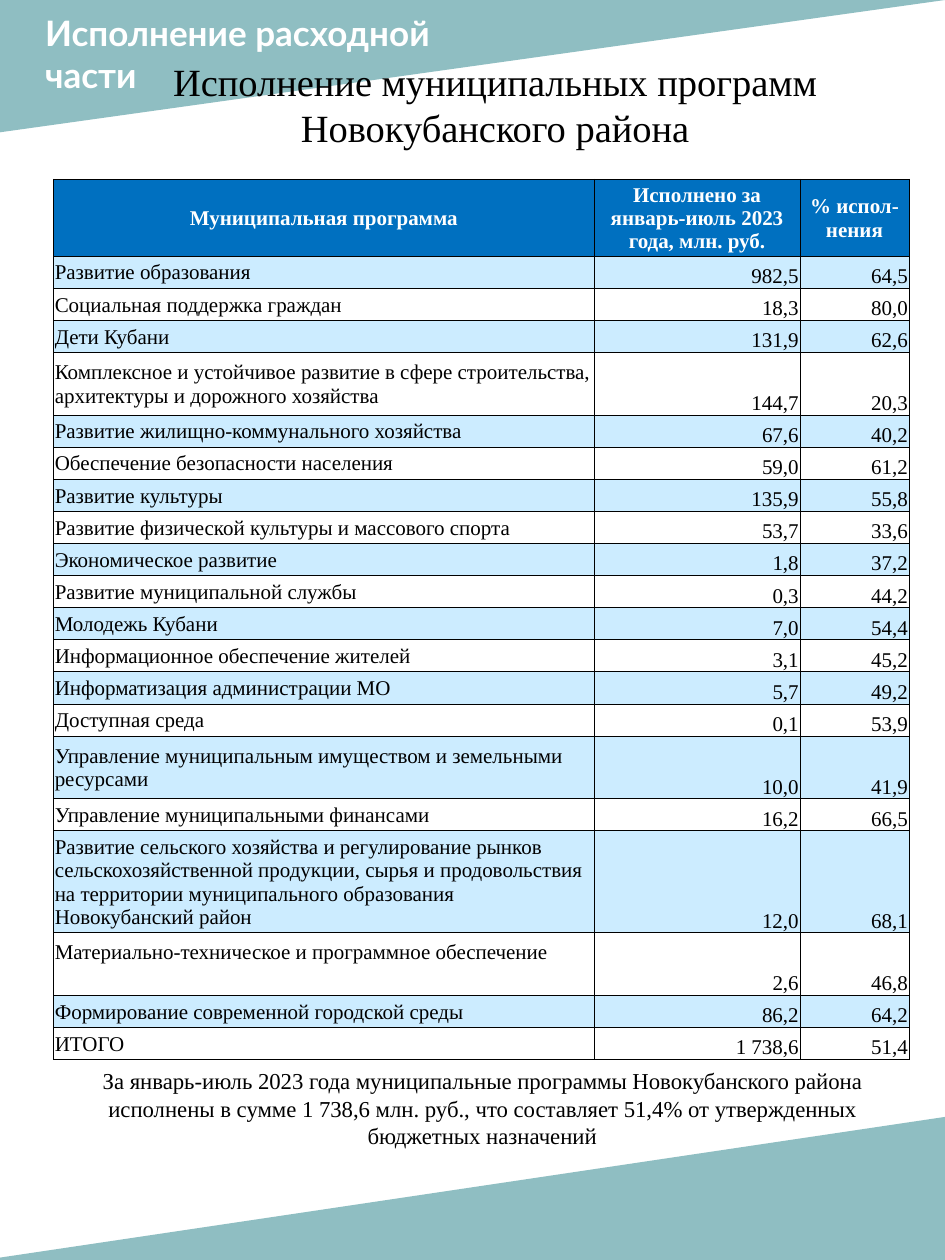
from lxml import etree
from pptx import Presentation
from pptx.dml.color import RGBColor
from pptx.enum import shapes, text
from pptx.oxml import ns
from pptx.util import Pt

TEAL = RGBColor(0x51, 0x9A, 0xA0)
BLUE = RGBColor(0x00, 0x70, 0xC0)
PALE = RGBColor(0xCC, 0xEC, 0xFF)
WHITE = RGBColor(0xFF, 0xFF, 0xFF)
BLACK = RGBColor(0x00, 0x00, 0x00)
SERIF = "Times New Roman"
LEFT, CENTER, RIGHT = text.PP_ALIGN.LEFT, text.PP_ALIGN.CENTER, text.PP_ALIGN.RIGHT
MIDDLE, BOTTOM = text.MSO_ANCHOR.MIDDLE, text.MSO_ANCHOR.BOTTOM

COLUMNS = (309, 117.5, 62.4)
LINE_HEIGHTS = {1: 18.35, 2: 35.8, 4: 53.5}
HEADINGS = ("Муниципальная программа", "Исполнено за январь-июль 2023 года, млн. руб.", "% испол-нения")
SPARE_LINE = "Материально-техническое и программное обеспечение"
PROGRAMS = [
    ("Развитие образования", "982,5", "64,5", 1),
    ("Социальная поддержка граждан", "18,3", "80,0", 1),
    ("Дети Кубани", "131,9", "62,6", 1),
    ("Комплексное и устойчивое развитие в сфере строительства, архитектуры и дорожного хозяйства",
     "144,7", "20,3", 2),
    ("Развитие жилищно-коммунального хозяйства", "67,6", "40,2", 1),
    ("Обеспечение безопасности населения", "59,0", "61,2", 1),
    ("Развитие культуры", "135,9", "55,8", 1),
    ("Развитие физической культуры и массового спорта", "53,7", "33,6", 1),
    ("Экономическое развитие", "1,8", "37,2", 1),
    ("Развитие муниципальной службы", "0,3", "44,2", 1),
    ("Молодежь Кубани", "7,0", "54,4", 1),
    ("Информационное обеспечение жителей", "3,1", "45,2", 1),
    ("Информатизация администрации МО", "5,7", "49,2", 1),
    ("Доступная среда", "0,1", "53,9", 1),
    ("Управление муниципальным имуществом и земельными ресурсами", "10,0", "41,9", 2),
    ("Управление муниципальными финансами", "16,2", "66,5", 1),
    ("Развитие сельского хозяйства и регулирование рынков сельскохозяйственной продукции, сырья "
     "и продовольствия на территории муниципального образования Новокубанский район", "12,0", "68,1", 4),
    (SPARE_LINE, "2,6", "46,8", 2),
    ("Формирование современной городской среды", "86,2", "64,2", 1),
    ("ИТОГО", "1 738,6", "51,4", 1),
]


def style_text(frame, size, font, color, align, bold=False):
    """Format every run of a text frame alike."""
    for paragraph in frame.paragraphs:
        paragraph.alignment = align
        for run in paragraph.runs:
            run.font.size = Pt(size)
            run.font.name = font
            run.font.bold = bold
            run.font.color.rgb = color


def add_wedge(slide, box, flip):
    """Place a translucent corner triangle, turned half round and flipped."""
    wedge = slide.shapes.add_shape(shapes.MSO_SHAPE.RIGHT_TRIANGLE, *map(Pt, box))
    wedge.shadow.inherit = False
    wedge.rotation = 180
    wedge.element.spPr.find(ns.qn("a:xfrm")).set(flip, "1")
    wedge.fill.solid()
    wedge.fill.fore_color.rgb = TEAL
    wedge.line.fill.background()
    tint = wedge.element.spPr.find(ns.qn("a:solidFill"))[0]
    etree.SubElement(tint, ns.qn("a:alpha")).set("val", "64000")


def add_caption(slide, box, wording, size, font, color, align, bold=False):
    """Place a wrapped text box."""
    frame = slide.shapes.add_textbox(*map(Pt, box)).text_frame
    frame.word_wrap = True
    frame.auto_size = text.MSO_AUTO_SIZE.SHAPE_TO_FIT_TEXT
    frame.text = wording
    style_text(frame, size, font, color, align, bold)


def add_borders(cell):
    """Draw thin black lines on all four sides of a cell."""
    properties = cell._tc.get_or_add_tcPr()
    for place, side in enumerate(("a:lnL", "a:lnR", "a:lnT", "a:lnB")):
        line = etree.Element(ns.qn(side), w=str(Pt(0.5)))
        fill = etree.SubElement(line, ns.qn("a:solidFill"))
        etree.SubElement(fill, ns.qn("a:srgbClr")).set("val", str(BLACK))
        properties.insert(place, line)


def fill_cell(cell, wording, fill, color, align, anchor, bold=False):
    """Write and style one table cell."""
    cell.text = wording
    style_text(cell.text_frame, 12, SERIF, color, align, bold)
    cell.vertical_anchor = anchor
    cell.margin_left = cell.margin_top = cell.margin_right = Pt(0.7)
    cell.margin_bottom = Pt(14 if wording == SPARE_LINE else 0)
    cell.fill.solid()
    cell.fill.fore_color.rgb = fill
    add_borders(cell)


def add_program_table(slide, box):
    """Place the table of municipal programmes."""
    table = slide.shapes.add_table(len(PROGRAMS) + 1, len(COLUMNS), *map(Pt, box)).table
    table.horz_banding = False
    for column, width in zip(table.columns, COLUMNS):
        column.width = Pt(width)
    table.rows[0].height = Pt(43.4)
    for col, heading in enumerate(HEADINGS):
        fill_cell(table.cell(0, col), heading, BLUE, WHITE, CENTER, MIDDLE, True)
    for row, (*values, lines) in enumerate(PROGRAMS, 1):
        table.rows[row].height = Pt(LINE_HEIGHTS[lines])
        band = PALE if row % 2 else WHITE
        for col, value in enumerate(values):
            align, anchor = (RIGHT, BOTTOM) if col else (LEFT, MIDDLE)
            fill_cell(table.cell(row, col), value, band, BLACK, align, anchor)


def main():
    """Build the slide and save it."""
    deck = Presentation()
    deck.slide_width, deck.slide_height = Pt(540), Pt(720)
    slide = deck.slides.add_slide(deck.slide_layouts[6])
    add_wedge(slide, (0, 0, 540, 75.6), "flipH")
    add_wedge(slide, (-9.4, 638, 550.8, 82), "flipV")
    add_caption(slide, (18.7, 2.9, 350.6, 55.4), "Исполнение расходной\nчасти", 20, "Lato", WHITE, LEFT, True)
    add_caption(slide, (46, 29.5, 473.8, 59.8), "Исполнение муниципальных программ Новокубанского района",
                22, SERIF, BLACK, CENTER)
    add_caption(slide, (31, 606.2, 488.9, 54.7),
                "За январь-июль 2023 года муниципальные программы Новокубанского района исполнены в сумме "
                "1 738,6 млн. руб., что составляет 51,4% от утвержденных бюджетных назначений",
                13, SERIF, BLACK, CENTER)
    add_program_table(slide, (30.6, 102.5, 488.9, 503.3))
    deck.save("out.pptx")


if __name__ == "__main__":
    main()
